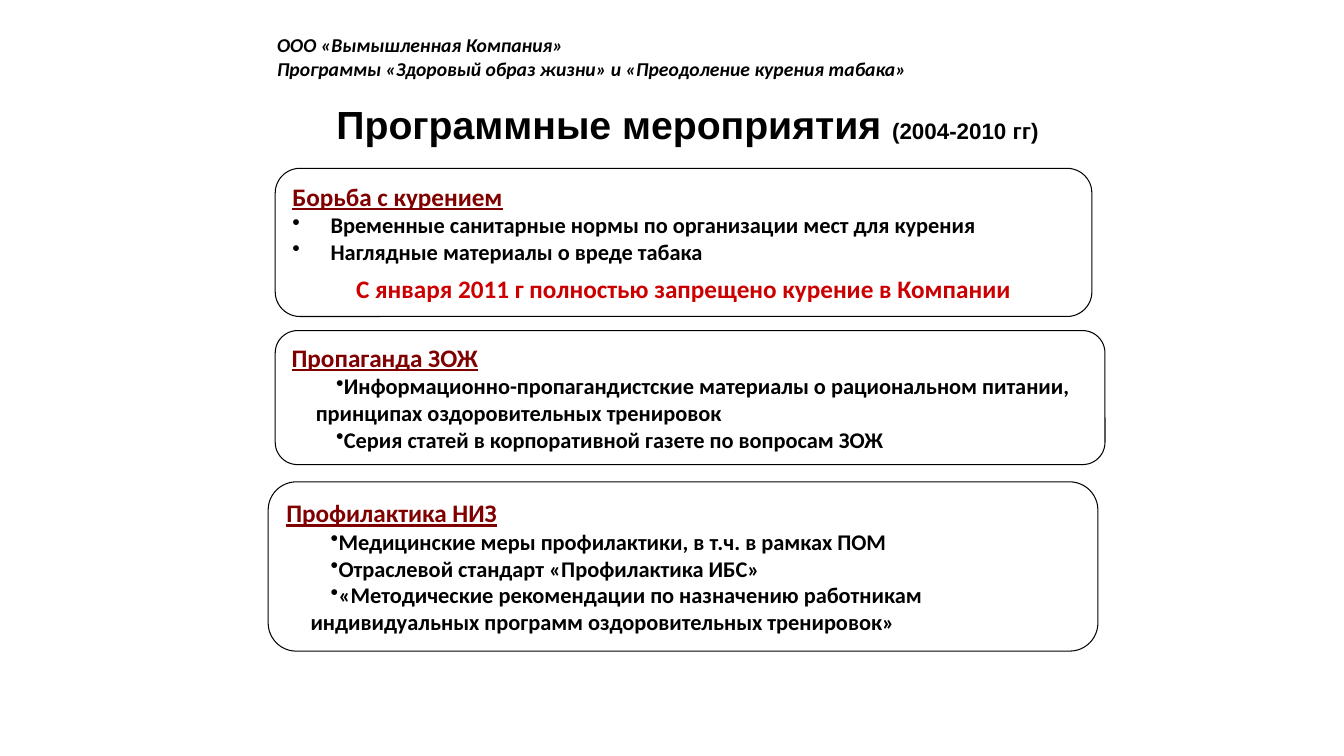
import pptx
import pptx.util
import pptx.dml.color
import pptx.enum.shapes
import pptx.enum.text
import lxml.etree
from dataclasses import dataclass

TITLE = ("Программные мероприятия ", "(2004-2010 гг)")
HEADER = ["ООО «Вымышленная Компания»",
          "Программы «Здоровый образ жизни» и «Преодоление курения табака»"]
# left, top, width, height; bullet margin and first-line indent, all in inches
SECTIONS = [
    {"heading": "Борьба с курением",
     "bullets": ["Временные санитарные нормы по организации мест для курения",
                 "Наглядные материалы о вреде табака"],
     "notice": "С января 2011 г полностью запрещено курение в Компании",
     "place": (2.73, 1.67, 8.1, 1.47), "indent": (0.38, -0.38)},
    {"heading": "Пропаганда ЗОЖ",
     "bullets": ["Информационно-пропагандистские материалы о рациональном питании, "
                 "принципах оздоровительных тренировок",
                 "Серия статей в корпоративной газете по вопросам ЗОЖ"],
     "place": (2.73, 3.28, 8.23, 1.33), "indent": (0.24, 0.2)},
    {"heading": "Профилактика НИЗ",
     "bullets": ["Медицинские меры профилактики, в т.ч. в рамках ПОМ",
                 "Отраслевой стандарт «Профилактика ИБС»",
                 "«Методические рекомендации по назначению работникам "
                 "индивидуальных программ оздоровительных тренировок»"],
     "place": (2.66, 4.78, 8.23, 1.68), "indent": (0.24, 0.2)},
]


@dataclass(frozen=True)
class Theme:
    title_font: str = "Arial"
    body_font: str = "Calibri"
    ink: str = "000000"
    paper: str = "FFFFFF"
    heading: str = "800000"
    notice: str = "CC0000"
    title_size: int = 28
    heading_size: int = 18
    bullet_size: int = 16
    header_size: int = 14


THEME = Theme()
Inches = pptx.util.Inches
Pt = pptx.util.Pt
ALIGN = pptx.enum.text.PP_ALIGN
ANCHOR = pptx.enum.text.MSO_ANCHOR


def rgb(code):
    return pptx.dml.color.RGBColor.from_string(code)


def inches(place):
    return [Inches(length) for length in place]


def format_span(span, size, color=THEME.ink, name=THEME.body_font, **styles):
    font = span.font
    font.name, font.size, font.bold = name, Pt(size), True
    font.color.rgb = rgb(color)
    for style, value in styles.items():
        setattr(font, style, value)


def add_para(frame, text, align=ALIGN.LEFT):
    """Use the frame's empty first paragraph, or append another."""
    para = frame.paragraphs[0] if not frame.text else frame.add_paragraph()
    para.text = text
    para.alignment = align
    return para


def set_bullet(para, margin, indent):
    properties = para._p.get_or_add_pPr()
    properties.set("marL", str(Inches(margin)))
    properties.set("indent", str(Inches(indent)))
    bullet = lxml.etree.SubElement(properties, pptx.oxml.ns.qn("a:buChar"))
    bullet.set("char", "•")


def add_title(page):
    title = page.shapes.title
    title.left, title.top, title.width, title.height = inches((3.12, 0.94, 7.4, 0.57))
    frame = title.text_frame
    frame.vertical_anchor = ANCHOR.MIDDLE
    para = frame.paragraphs[0]
    para.alignment = ALIGN.CENTER
    for text, size in zip(TITLE, (THEME.title_size, THEME.bullet_size)):
        span = para.add_run()
        span.text = text
        format_span(span, size, name=THEME.title_font)


def add_header(page):
    frame = page.shapes.add_textbox(*inches((2.65, 0.28, 7.24, 0.57))).text_frame
    frame.word_wrap = True
    for line in HEADER:
        para = add_para(frame, line)
        format_span(para.runs[0], THEME.header_size, italic=True)


def add_section(page, section):
    box = page.shapes.add_shape(pptx.enum.shapes.MSO_SHAPE.ROUNDED_RECTANGLE,
                                *inches(section["place"]))
    box.shadow.inherit = False
    box.fill.solid()
    box.fill.fore_color.rgb = rgb(THEME.paper)
    box.line.color.rgb = rgb(THEME.ink)
    box.line.width = Pt(0.75)
    frame = box.text_frame
    frame.word_wrap = True
    frame.vertical_anchor = ANCHOR.MIDDLE

    heading = add_para(frame, section["heading"])
    format_span(heading.runs[0], THEME.heading_size, THEME.heading, underline=True)
    for text in section["bullets"]:
        para = add_para(frame, text)
        set_bullet(para, *section["indent"])
        format_span(para.runs[0], THEME.bullet_size)
    if "notice" in section:
        para.space_after = Pt(6)
        notice = add_para(frame, section["notice"], ALIGN.CENTER)
        format_span(notice.runs[0], THEME.heading_size, THEME.notice)


def main():
    deck = pptx.Presentation()
    deck.slide_width, deck.slide_height = inches((13.33, 7.5))
    page = deck.slides.add_slide(deck.slide_layouts.get_by_name("Title Only"))
    add_title(page)
    add_header(page)
    for section in SECTIONS:
        add_section(page, section)
    deck.save("out.pptx")


if __name__ == "__main__":
    main()
